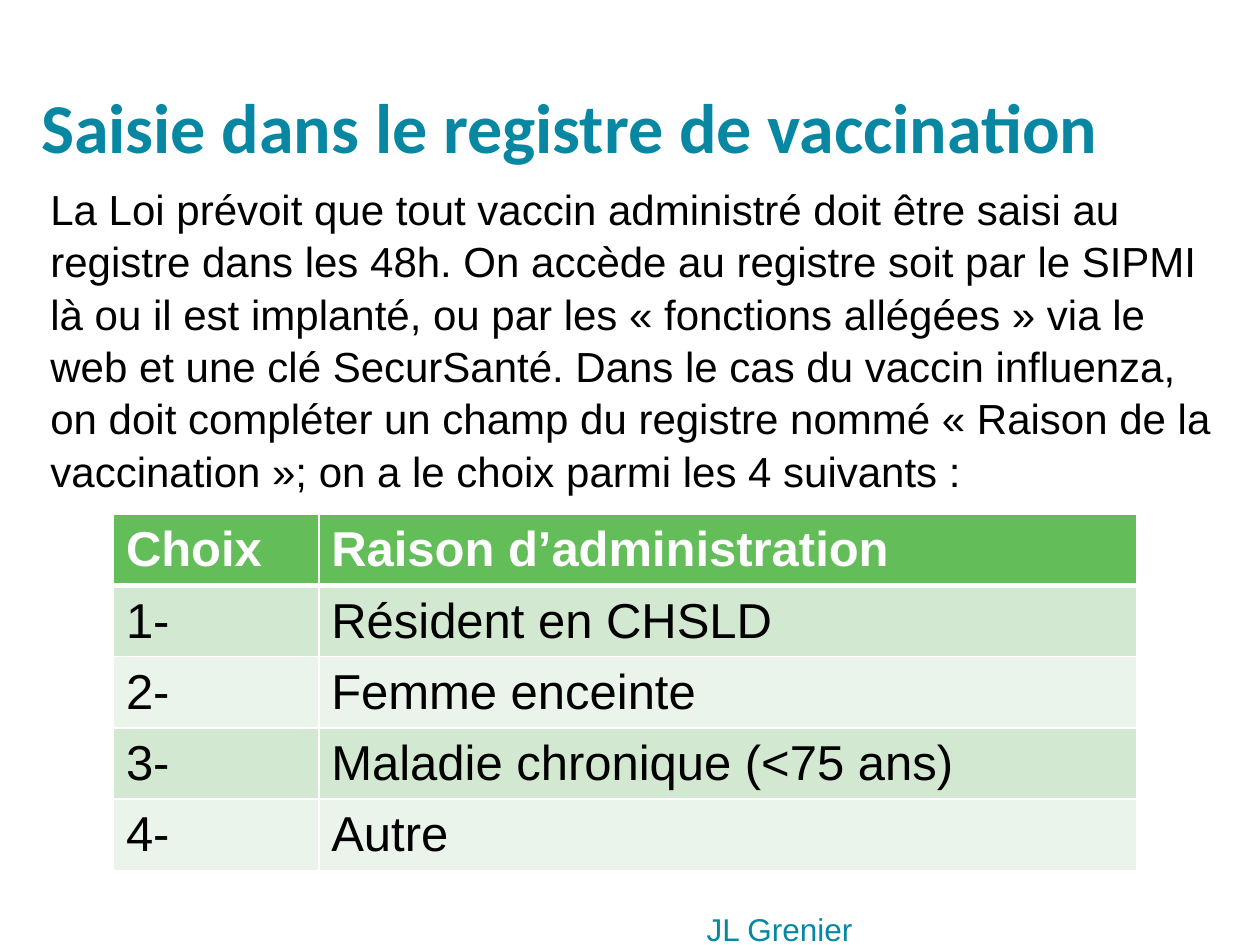
from lxml import etree
from pptx import Presentation
from pptx.dml.color import RGBColor
from pptx.enum.text import MSO_ANCHOR, MSO_AUTO_SIZE, PP_ALIGN
from pptx.oxml.ns import qn
from pptx.util import Inches, Pt

LEFT, CENTER = PP_ALIGN.LEFT, PP_ALIGN.CENTER
TOP = MSO_ANCHOR.TOP
NO_FIT = MSO_AUTO_SIZE.NONE

TEAL = RGBColor(0x07, 0x87, 0xA1)
GREEN = RGBColor(0x63, 0xBD, 0x59)
BANDS = (RGBColor(0xD3, 0xE8, 0xD1), RGBColor(0xEA, 0xF4, 0xEA))
WHITE = RGBColor(0xFF, 0xFF, 0xFF)
BLACK = RGBColor(0, 0, 0)

TITLE = "Saisie dans le registre de vaccination"
BODY = (
    "La Loi prévoit que tout vaccin administré doit être saisi au registre "
    "dans les 48h. On accède au registre soit par le SIPMI là ou il est "
    "implanté, ou par les « fonctions allégées » via le web et une clé "
    "SecurSanté. Dans le cas du vaccin influenza, on doit compléter un champ "
    "du registre nommé « Raison de la vaccination »; on a le choix parmi "
    "les 4 suivants :"
)
REASONS = [
    ("Choix", "Raison d’administration"),
    ("1-", "Résident en CHSLD"),
    ("2-", "Femme enceinte"),
    ("3-", "Maladie chronique (<75 ans)"),
    ("4-", "Autre"),
]


def place(shape, left, top, width, height):
    shape.left, shape.top = Inches(left), Inches(top)
    shape.width, shape.height = Inches(width), Inches(height)


def write(tf, text, size, color, font="Arial", bold=False, align=LEFT, spacing=1.0):
    p = tf.paragraphs[0]
    p.alignment = align
    p.line_spacing = spacing
    p.space_before = Pt(0)
    r = p.add_run()
    r.text = text
    r.font.name, r.font.size, r.font.bold = font, Pt(size), bold
    r.font.color.rgb = color
    return p


def setup_frame(tf, inset_top=0.05):
    tf.word_wrap = True
    tf.auto_size = NO_FIT
    tf.vertical_anchor = TOP
    tf.margin_top = Inches(inset_top)


def remove_bullet(p):
    pPr = p._p.get_or_add_pPr()
    pPr.set("marL", "0")
    pPr.set("indent", "0")
    etree.SubElement(pPr, qn("a:buNone"))


def set_borders(cell, color, widths):
    tcPr = cell._tc.get_or_add_tcPr()
    for i, (side, width) in enumerate(widths.items()):
        ln = etree.Element(qn(f"a:ln{side}"), w=str(Pt(width)))
        fill = etree.SubElement(ln, qn("a:solidFill"))
        etree.SubElement(fill, qn("a:srgbClr"), val=str(color))
        tcPr.insert(i, ln)


def add_reason_table(s, left, top, col_widths, row_height):
    n_rows = len(REASONS)
    table = s.shapes.add_table(
        n_rows, len(col_widths), Inches(left), Inches(top),
        Inches(sum(col_widths)), Inches(row_height * n_rows)).table
    for col, width in zip(table.columns, col_widths):
        col.width = Inches(width)
    for i, values in enumerate(REASONS):
        table.rows[i].height = Inches(row_height)
        header = i == 0
        widths = {"L": 1, "R": 1, "T": 3 if i == 1 else 1, "B": 3 if header else 1}
        for j, value in enumerate(values):
            cell = table.cell(i, j)
            cell.fill.solid()
            cell.fill.fore_color.rgb = GREEN if header else BANDS[(i - 1) % 2]
            set_borders(cell, WHITE, widths)
            write(cell.text_frame, value, 28, WHITE if header else BLACK,
                  bold=header, spacing=1.04)


def main():
    prs = Presentation()
    prs.slide_width, prs.slide_height = Inches(10), Inches(7.5)
    s = prs.slides.add_slide(prs.slide_layouts[1])
    title, body = s.placeholders

    # Title
    place(title, 0.02, 0.58, 9, 1.1)
    setup_frame(title.text_frame, inset_top=0.08)
    write(title.text_frame, TITLE, 40, TEAL, font="Calibri", bold=True, align=CENTER)

    # Introduction
    place(body, 0.3, 1.39, 9.47, 2.52)
    setup_frame(body.text_frame)
    remove_bullet(write(body.text_frame, BODY, 24, BLACK, spacing=1.04))

    # Reasons for vaccination
    add_reason_table(s, 0.9, 4.08, (1.63, 6.49), 2.83 / len(REASONS))

    # Author
    author = s.shapes.add_textbox(0, 0, 0, 0)
    place(author, 5.51, 6.98, 2.15, 0.52)
    setup_frame(author.text_frame, inset_top=0.24)
    write(author.text_frame, "JL Grenier", 18, TEAL)

    prs.save("out.pptx")


if __name__ == "__main__":
    main()
